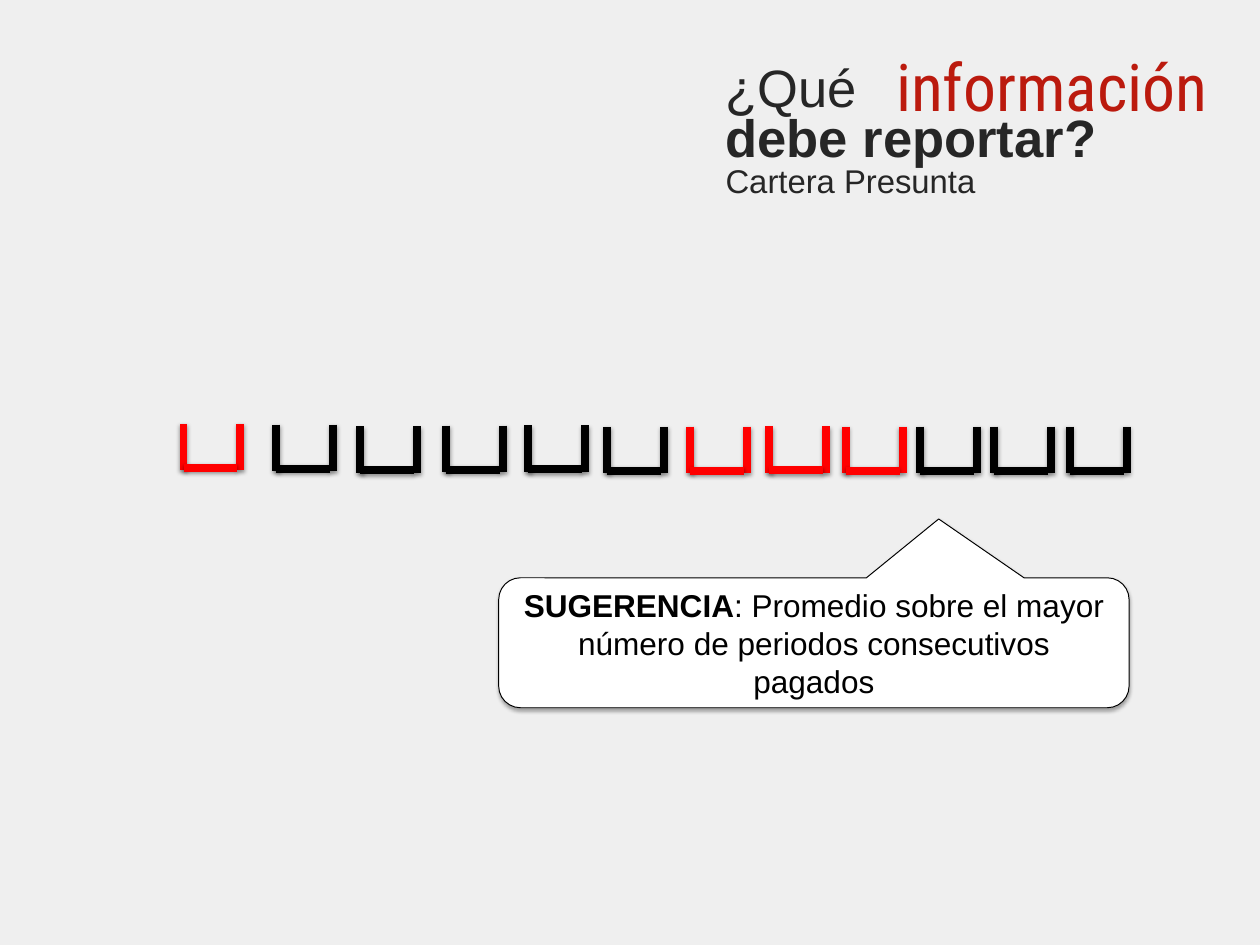
"""Build the slide that explains which presumed-portfolio information to report."""
from dataclasses import dataclass

from lxml.etree import SubElement
from pptx import Presentation
from pptx.dml.color import RGBColor
from pptx.enum.shapes import MSO_CONNECTOR as Connector
from pptx.enum.shapes import MSO_SHAPE as Preset
from pptx.enum.text import MSO_ANCHOR as Anchor
from pptx.enum.text import MSO_AUTO_SIZE as AutoSize
from pptx.enum.text import PP_ALIGN as Align
from pptx.oxml.ns import qn
from pptx.shapes.base import BaseShape
from pptx.slide import Slide
from pptx.text.text import Font, TextFrame
from pptx.util import Pt


@dataclass(frozen=True)
class Theme:
    background: str = "EFEFEF"
    panel: str = "FFFFFF"
    ink: str = "000000"
    heading: str = "262626"
    accent: str = "BB1A0E"
    missing: str = "FF0000"
    body_font: str = "Arial"
    accent_font: str = "Roboto Condensed"
    title_size: float = 40
    subtitle_size: float = 25
    accent_size: float = 50
    note_size: float = 24


@dataclass(frozen=True)
class Period:
    left: float
    top: float
    color: str


@dataclass(frozen=True)
class TitleLine:
    text: str
    size: float
    bold: bool = False


@dataclass(frozen=True)
class Shadow:
    opacity: int
    distance: float
    blur: float = 3.1


THEME = Theme()
LINE_SHADOW = Shadow(38, 1.6)
NOTE_SHADOW = Shadow(35, 1.8)
CUP_WIDTH, CUP_HEIGHT, BASE_WIDTH, BASE_DROP = 43.3, 35.5, 41, 33.5
PERIODS = (
    Period(139.7, 322.6, THEME.missing),
    Period(210.2, 323.3, THEME.ink),
    Period(274.3, 324.5, THEME.ink),
    Period(339.8, 324, THEME.ink),
    Period(402, 323.8, THEME.ink),
    Period(462.2, 324.9, THEME.ink),
    Period(525.5, 324.7, THEME.missing),
    Period(585.4, 324.5, THEME.missing),
    Period(643.7, 324.7, THEME.missing),
    Period(700.5, 324.7, THEME.ink),
    Period(756.7, 324.7, THEME.ink),
    Period(814.3, 324.7, THEME.ink),
)
TITLE_LINES = (
    TitleLine("¿Qué", THEME.title_size),
    TitleLine("debe reportar?", THEME.title_size, True),
    TitleLine("Cartera Presunta", THEME.subtitle_size),
)


def rgb(color: str) -> RGBColor:
    return RGBColor.from_string(color)


def style_font(font: Font, name: str, size: float, color: str) -> None:
    font.name, font.size = name, Pt(size)
    font.color.rgb = rgb(color)


def set_insets(frame: TextFrame) -> None:
    frame.word_wrap = True
    frame.margin_left = frame.margin_right = Pt(9.36)
    frame.margin_top = frame.margin_bottom = Pt(5.04)


def add_shadow(shape: BaseShape, shadow: Shadow) -> None:
    effects = SubElement(shape.element.spPr, qn("a:effectLst"))
    outer = SubElement(effects, qn("a:outerShdw"), blurRad=str(Pt(shadow.blur)),
                       dist=str(Pt(shadow.distance)), dir="5400000", rotWithShape="0")
    color = SubElement(outer, qn("a:srgbClr"), val=THEME.ink)
    SubElement(color, qn("a:alpha"), val=str(shadow.opacity * 1000))


def add_title(slide: Slide) -> None:
    title = slide.shapes.title
    title.left, title.top, title.width, title.height = Pt(542.9), Pt(46.1), Pt(557.3), Pt(159.1)
    frame = title.text_frame
    set_insets(frame)
    frame.auto_size, frame.vertical_anchor = AutoSize.NONE, Anchor.TOP
    frame.text = "\n".join(line.text for line in TITLE_LINES)
    for para, line in zip(frame.paragraphs, TITLE_LINES):
        para.alignment, para.line_spacing = Align.LEFT, 0.8
        para.space_before = Pt(0)
        style_font(para.font, THEME.body_font, line.size, THEME.heading)
        para.font.bold = line.bold


def add_accent_word(slide: Slide) -> None:
    box = slide.shapes.add_textbox(Pt(627.1), Pt(29.5), Pt(301.7), Pt(70.6))
    set_insets(box.text_frame)
    box.text_frame.auto_size = AutoSize.SHAPE_TO_FIT_TEXT
    para = box.text_frame.paragraphs[0]
    para.text, para.alignment = "información", Align.RIGHT
    style_font(para.font, THEME.accent_font, THEME.accent_size, THEME.accent)


def add_suggestion(slide: Slide) -> None:
    callout = slide.shapes.add_shape(Preset.ROUNDED_RECTANGULAR_CALLOUT,
                                     Pt(379.6), Pt(439.8), Pt(479.8), Pt(98.9))
    callout.top, callout.height = Pt(439.8), Pt(98.9)
    for index, value in enumerate((0.198, -0.953, 0.167)):
        callout.adjustments[index] = value
    callout.fill.solid()
    callout.fill.fore_color.rgb = rgb(THEME.panel)
    callout.line.color.rgb = rgb(THEME.ink)
    callout.line.width = Pt(0.75)
    add_shadow(callout, NOTE_SHADOW)
    frame = callout.text_frame
    frame.word_wrap, frame.vertical_anchor = True, Anchor.MIDDLE
    para = frame.paragraphs[0]
    para.alignment = Align.CENTER
    style_font(para.font, THEME.body_font, THEME.note_size, THEME.ink)
    for text, bold in (("SUGERENCIA", True),
                       (": Promedio sobre el mayor número de periodos consecutivos pagados", False)):
        span = para.add_run()
        span.text, span.font.bold = text, bold


def add_period(slide: Slide, period: Period) -> None:
    group = slide.shapes.add_group_shape()
    left, top = period.left, period.top
    right, base = left + CUP_WIDTH, top + BASE_DROP
    for x1, y1, x2, y2 in ((left, top, left, top + CUP_HEIGHT),
                           (right, top, right, top + CUP_HEIGHT),
                           (left, base, left + BASE_WIDTH, base)):
        stroke = group.shapes.add_connector(Connector.STRAIGHT, Pt(x1), Pt(y1), Pt(x2), Pt(y2))
        stroke.line.color.rgb = rgb(period.color)
        stroke.line.width = Pt(6)
        add_shadow(stroke, LINE_SHADOW)


def main() -> None:
    deck = Presentation()
    deck.slide_width, deck.slide_height = Pt(959), Pt(719.3)
    page = deck.slides.add_slide(deck.slide_layouts[5])
    page.background.fill.solid()
    page.background.fill.fore_color.rgb = rgb(THEME.background)
    add_suggestion(page)
    add_title(page)
    add_accent_word(page)
    for period in PERIODS:
        add_period(page, period)
    deck.save("out.pptx")


if __name__ == "__main__":
    main()
